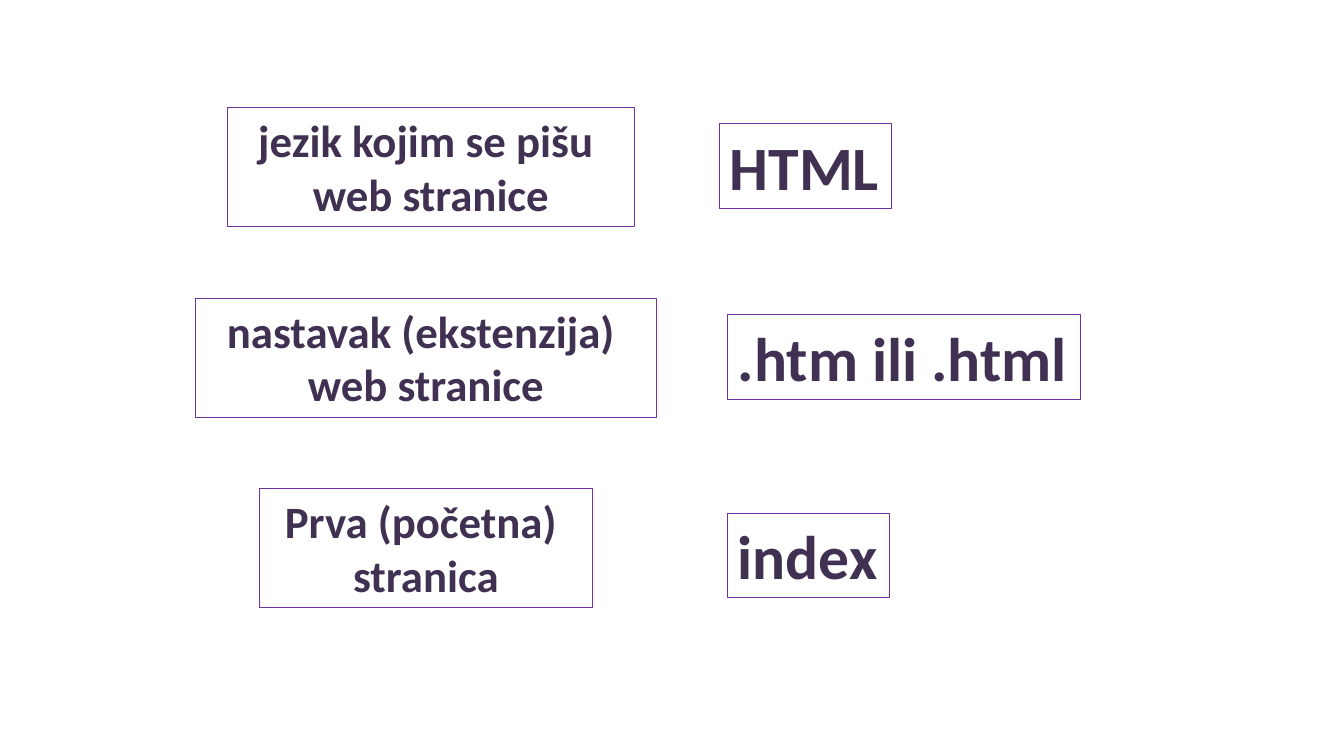
"""Build a slide that pairs web page descriptions with their terms."""
from pptx import Presentation
from pptx.dml.color import RGBColor
from pptx.enum.text import MSO_AUTO_SIZE, PP_ALIGN
from pptx.util import Emu, Pt

PX = 9144
PURPLE = RGBColor(0x70, 0x30, 0xA0)
DARK_PURPLE = RGBColor(0x40, 0x31, 0x52)
LEFT, CENTER = PP_ALIGN.LEFT, PP_ALIGN.CENTER
GROW = MSO_AUTO_SIZE.SHAPE_TO_FIT_TEXT

DESCRIPTION_HEIGHT = 118
TERM_HEIGHT = 84

DESCRIPTIONS = [
    (226, 107, 403, ["jezik kojim se pišu ", "web stranice"]),
    (194, 296, 457, ["nastavak (ekstenzija) ", "web stranice"]),
    (257, 485, 331, ["Prva (početna) ", "stranica"]),
]
TERMS = [
    (714, 123, 170, "HTML"),
    (722, 312, 350, ".htm ili .html"),
    (722, 509, 160, "index"),
]


def px(n):
    return Emu(n * PX)


def add_box(slide, x, y, w, h, lines, size, align, wrap):
    sp = slide.shapes.add_textbox(px(x), px(y), px(w), px(h))
    sp.line.color.rgb = PURPLE
    sp.line.width = Pt(0.75)
    tf = sp.text_frame
    tf.word_wrap = wrap
    tf.auto_size = GROW
    tf.text = "\n".join(lines)
    for p in tf.paragraphs:
        p.alignment = align
        p.font.name = "Calibri"
        p.font.size = Pt(size)
        p.font.bold = True
        p.font.color.rgb = DARK_PURPLE


def add_description(slide, x, y, w, lines):
    add_box(slide, x, y, w, DESCRIPTION_HEIGHT, lines, 32, CENTER, True)


def add_term(slide, x, y, w, text):
    add_box(slide, x, y, w, TERM_HEIGHT, [text], 44, LEFT, False)


def main():
    prs = Presentation()
    prs.slide_width, prs.slide_height = px(1333), px(750)
    s = prs.slides.add_slide(prs.slide_layouts[6])
    for description, term in zip(DESCRIPTIONS, TERMS):
        add_description(s, *description)
        add_term(s, *term)
    prs.save("out.pptx")


if __name__ == "__main__":
    main()
